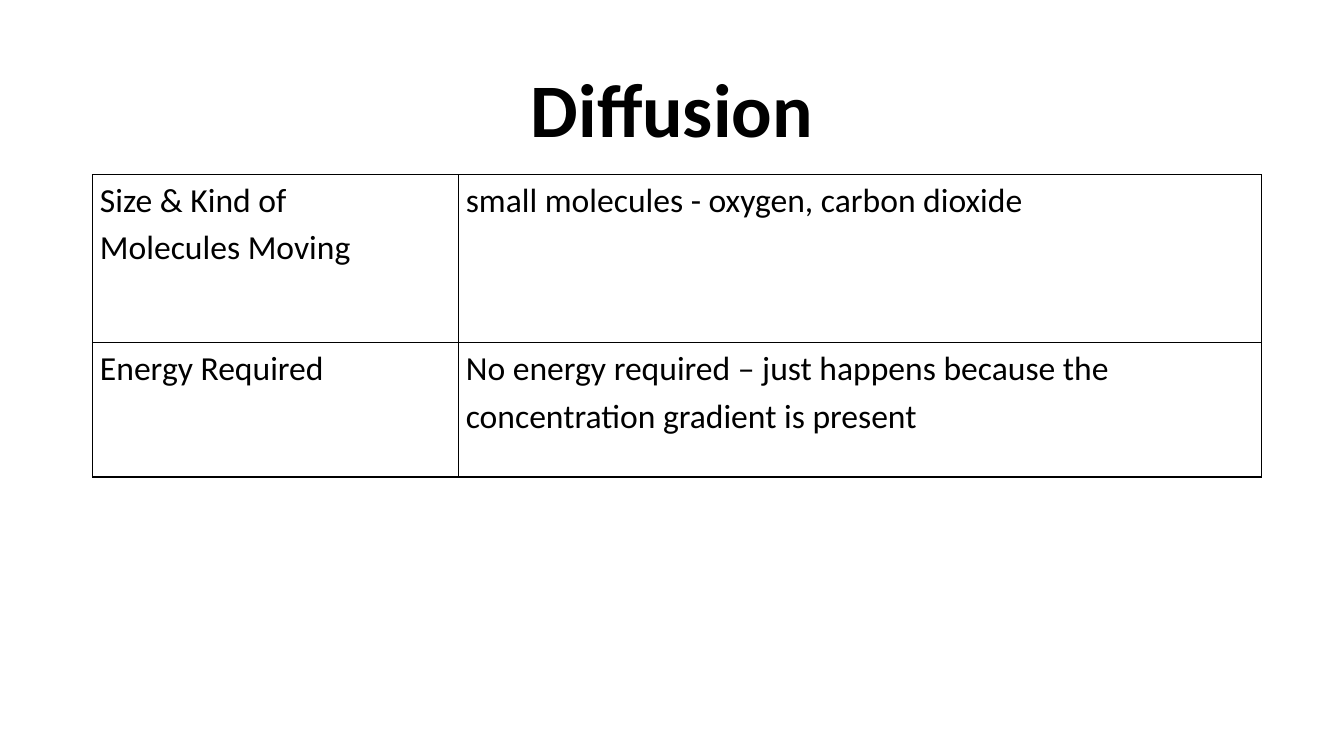
from dataclasses import dataclass

from lxml.etree import SubElement
from pptx import Presentation
from pptx.dml.color import RGBColor
from pptx.enum.text import MSO_ANCHOR, PP_ALIGN
from pptx.oxml.ns import qn
from pptx.util import Cm, Pt

TITLE = "Diffusion"
ROWS = [
    (["Size & Kind of", "Molecules Moving"],
     ["small molecules - oxygen, carbon dioxide"]),
    (["Energy Required"],
     ["No energy required – just happens because the concentration gradient is present"]),
]
COL_WIDTHS = [Cm(9.22), Cm(20.24)]
ROW_HEIGHTS = [Cm(4.24), Cm(3.38)]
LEFT = Cm(2.33)
TABLE_TOP = Cm(4.4)


@dataclass(frozen=True)
class Theme:
    font: str = "Calibri"
    ink: str = "000000"
    title_size: int = 54
    cell_size: int = 24
    border: int = 1


THEME = Theme()


def style(p, size, spacing, bold=False):
    p.line_spacing = spacing
    p.font.name = THEME.font
    p.font.size = Pt(size)
    p.font.bold = bold
    p.font.color.rgb = RGBColor.from_string(THEME.ink)


def add_borders(cell):
    """Draw all four edges; call before the fill, which must follow them in the XML."""
    tc_pr = cell._tc.get_or_add_tcPr()
    for side in ("lnL", "lnR", "lnT", "lnB"):
        ln = SubElement(tc_pr, qn(f"a:{side}"), w=str(Pt(THEME.border)))
        fill = SubElement(ln, qn("a:solidFill"))
        SubElement(fill, qn("a:srgbClr"), val=THEME.ink)


def fill_cell(cell, lines):
    cell.margin_left = cell.margin_right = Cm(0.19)
    cell.margin_top = cell.margin_bottom = 0
    add_borders(cell)
    cell.fill.background()
    tf = cell.text_frame
    tf.text = "\n".join(lines)
    for p in tf.paragraphs:
        style(p, THEME.cell_size, 1.15)


def add_title(slide):
    title = slide.shapes.title
    title.left, title.top, title.width, title.height = LEFT, Cm(1.01), Cm(29.21), Cm(3.68)
    tf = title.text_frame
    tf.text = TITLE
    tf.vertical_anchor = MSO_ANCHOR.MIDDLE
    p = tf.paragraphs[0]
    p.alignment = PP_ALIGN.CENTER
    style(p, THEME.title_size, 0.9, bold=True)


def add_facts_table(slide):
    table = slide.shapes.add_table(
        len(ROWS), len(COL_WIDTHS), LEFT, TABLE_TOP, sum(COL_WIDTHS), sum(ROW_HEIGHTS)
    ).table
    table.first_row = table.horz_banding = False
    for column, width in zip(table.columns, COL_WIDTHS):
        column.width = width
    for row, height, texts in zip(table.rows, ROW_HEIGHTS, ROWS):
        row.height = height
        for cell, lines in zip(row.cells, texts):
            fill_cell(cell, lines)


def main():
    prs = Presentation()
    prs.slide_width, prs.slide_height = Cm(33.87), Cm(19.05)
    slide = prs.slides.add_slide(prs.slide_layouts[5])
    add_title(slide)
    add_facts_table(slide)
    prs.save("out.pptx")


if __name__ == "__main__":
    main()
